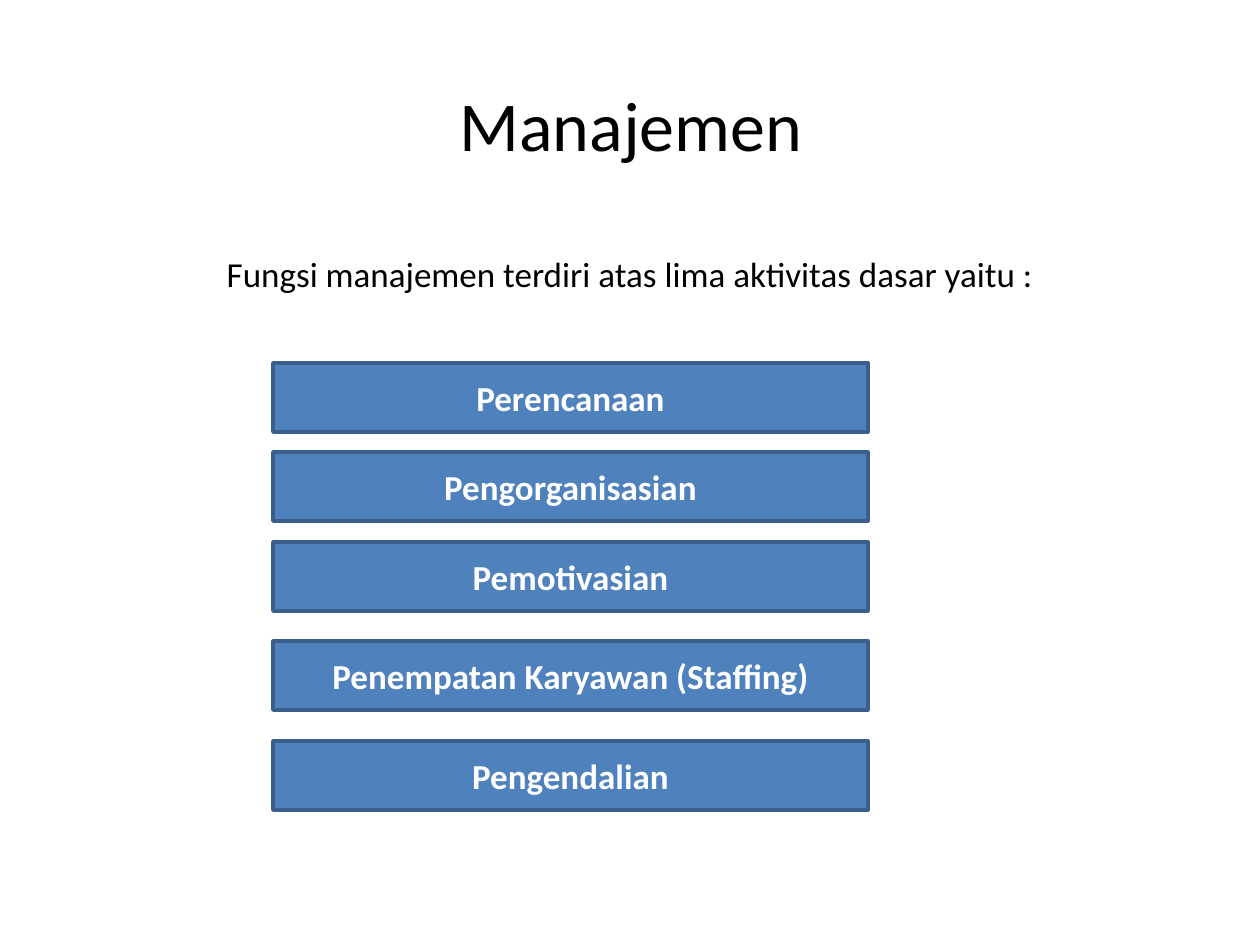
from dataclasses import dataclass

import pptx
import pptx.dml.color
import pptx.enum.shapes
import pptx.enum.text
import pptx.util

SCALE = 914400 / 126


@dataclass(frozen=True)
class Theme:
    font: str = "Calibri"
    ink: str = "000000"
    light: str = "FFFFFF"
    fill: str = "4F81BD"
    edge: str = "3A5F8C"
    title: int = 40
    body: int = 20
    line: int = 2


THEME = Theme()


def px(*nums):
    return [pptx.util.Emu(round(num * SCALE)) for num in nums]


def tint(code):
    return pptx.dml.color.RGBColor.from_string(code)


def write(shape, text, size, color, bold=False):
    frame = shape.text_frame
    frame.word_wrap = True
    frame.vertical_anchor = pptx.enum.text.MSO_ANCHOR.MIDDLE
    para = frame.paragraphs[0]
    para.text = text
    para.alignment = pptx.enum.text.PP_ALIGN.CENTER
    para.font.name = THEME.font
    para.font.size = pptx.util.Pt(size)
    para.font.bold = bold
    para.font.color.rgb = tint(color)


def label(slide, box, text, size):
    shape = slide.shapes.add_textbox(*px(*box))
    write(shape, text, size, THEME.ink)


def bar(slide, box, text):
    kind = pptx.enum.shapes.MSO_SHAPE.RECTANGLE
    shape = slide.shapes.add_shape(kind, *px(*box))
    shape.shadow.inherit = False
    shape.fill.solid()
    shape.fill.fore_color.rgb = tint(THEME.fill)
    shape.line.color.rgb = tint(THEME.edge)
    shape.line.width = pptx.util.Pt(THEME.line)
    write(shape, text, THEME.body, THEME.light, True)


def main():
    deck = pptx.Presentation()
    deck.slide_width, deck.slide_height = px(1260, 945)
    slide = deck.slides.add_slide(deck.slide_layouts[6])
    label(slide, (64, 45, 1134, 158), "Manajemen", THEME.title)
    intro = "Fungsi manajemen terdiri atas lima aktivitas dasar yaitu :"
    label(slide, (63, 243, 1134, 60), intro, THEME.body)
    tasks = (
        (363, "Perencanaan"),
        (452, "Pengorganisasian"),
        (542, "Pemotivasian"),
        (641, "Penempatan Karyawan (Staffing)"),
        (741, "Pengendalian"),
    )
    for top, text in tasks:
        bar(slide, (273, top, 595, 69), text)
    deck.save("out.pptx")


if __name__ == "__main__":
    main()
